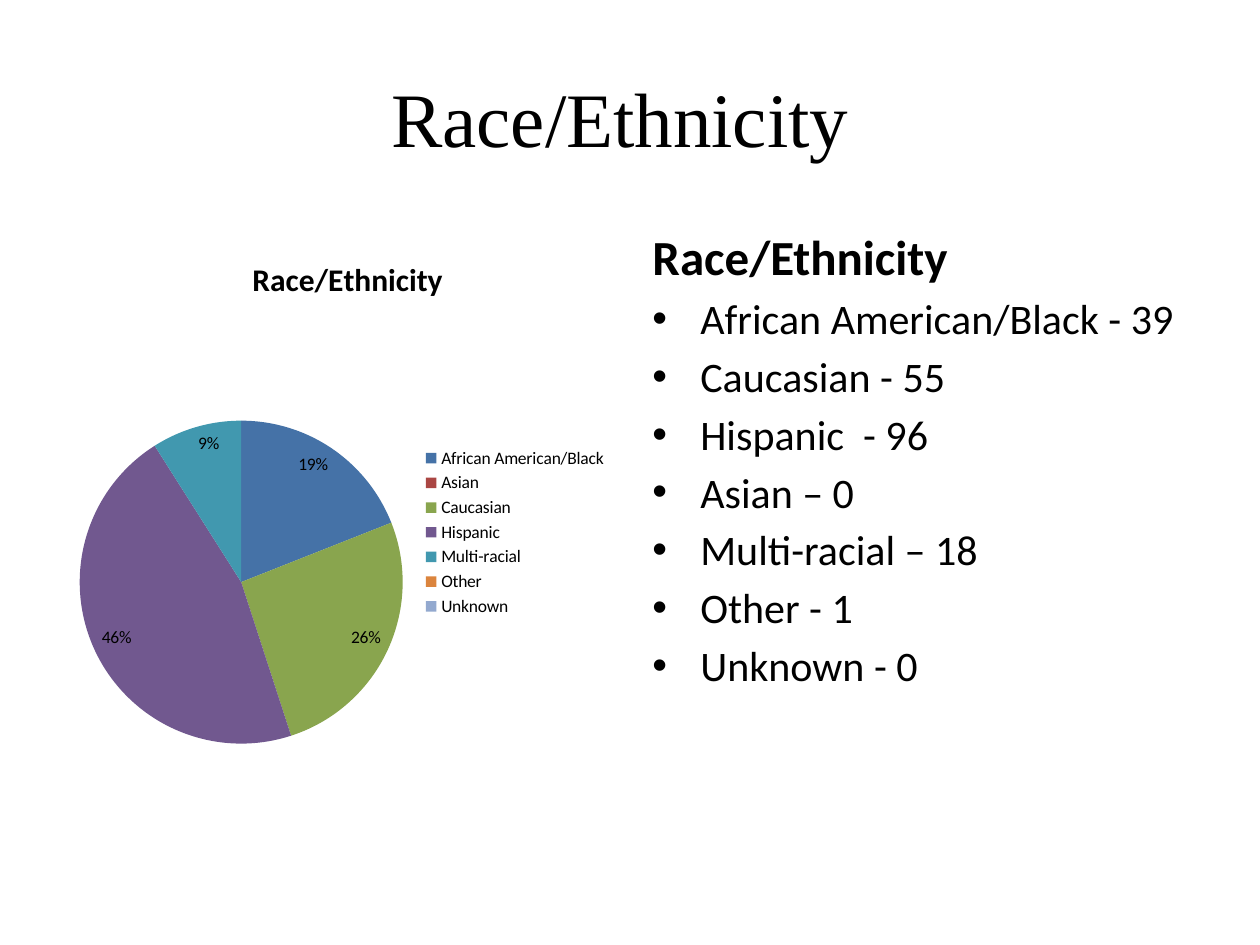
from lxml.etree import SubElement
from pptx import Presentation
from pptx.chart.data import CategoryChartData
from pptx.dml.color import RGBColor
from pptx.enum.chart import XL_CHART_TYPE, XL_LABEL_POSITION, XL_LEGEND_POSITION
from pptx.enum.text import MSO_ANCHOR, PP_ALIGN
from pptx.oxml.ns import qn
from pptx.util import Inches, Pt

BLACK = RGBColor(0, 0, 0)
SLICES = [
    ("African American/Black", 19, RGBColor(0x45, 0x72, 0xA7)),
    ("Asian", 0, RGBColor(0xAA, 0x46, 0x43)),
    ("Caucasian", 26, RGBColor(0x89, 0xA5, 0x4E)),
    ("Hispanic", 46, RGBColor(0x71, 0x58, 0x8F)),
    ("Multi-racial", 9, RGBColor(0x41, 0x98, 0xAF)),
    ("Other", 0, RGBColor(0xDB, 0x84, 0x3D)),
    ("Unknown", 0, RGBColor(0x93, 0xA9, 0xCF)),
]
COUNTS = [
    "African American/Black - 39",
    "Caucasian - 55",
    "Hispanic  - 96",
    "Asian – 0",
    "Multi-racial – 18",
    "Other - 1",
    "Unknown - 0",
]


def set_font(font, **values):
    font.color.rgb = BLACK
    for name, value in values.items():
        setattr(font, name, value)


def add_text_box(page, left, top, width, height, anchor):
    box = page.shapes.add_textbox(Inches(left), Inches(top), Inches(width), Inches(height))
    box.text_frame.word_wrap = True
    box.text_frame.vertical_anchor = anchor
    return box.text_frame


def write_span(para, text, **values):
    span = para.add_run()
    span.text = text
    set_font(span.font, **values)


def add_bullet(para):
    properties = para._p.get_or_add_pPr()
    properties.set("marL", str(Inches(0.38)))
    properties.set("indent", str(-Inches(0.38)))
    SubElement(properties, qn("a:buFont")).set("typeface", "Arial")
    SubElement(properties, qn("a:buChar")).set("char", "•")


def add_title(page):
    frame = add_text_box(page, 0.5, 0.3, 9, 1.25, MSO_ANCHOR.MIDDLE)
    para = frame.paragraphs[0]
    para.alignment = PP_ALIGN.CENTER
    write_span(para, "Race/Ethnicity ", name="Times New Roman", size=Pt(44))


def add_counts(page):
    frame = add_text_box(page, 5.08, 1.75, 4.42, 4.95, MSO_ANCHOR.TOP)
    write_span(frame.paragraphs[0], "Race/Ethnicity", name="Calibri", size=Pt(28), bold=True)
    for count in COUNTS:
        para = frame.add_paragraph()
        para.space_before = Pt(4.2)
        add_bullet(para)
        write_span(para, count, name="Calibri", size=Pt(24))


def place_chart_part(layout, target, **fractions):
    manual = SubElement(layout, qn("c:manualLayout"))
    if target:
        SubElement(manual, qn("c:layoutTarget")).set("val", target)
    for mode in ("xMode", "yMode"):
        SubElement(manual, qn(f"c:{mode}")).set("val", "edge")
    for name, fraction in fractions.items():
        SubElement(manual, qn(f"c:{name}")).set("val", str(fraction))


def chart_layout(element, position):
    layout = element.find(qn("c:layout"))
    if layout is None:
        layout = SubElement(element, qn("c:layout"))
        element.insert(position, layout)
    return layout


def hide_label(labels, index):
    label = SubElement(labels._element, qn("c:dLbl"))
    SubElement(label, qn("c:idx")).set("val", str(index))
    SubElement(label, qn("c:delete")).set("val", "1")
    labels._element.insert(0, label)


def add_pie(page):
    data = CategoryChartData()
    data.categories = [name for name, value, color in SLICES]
    data.add_series("Series 1", [value for name, value, color in SLICES])
    chart = page.shapes.add_chart(
        XL_CHART_TYPE.PIE, Inches(0.5), Inches(1.75), Inches(4.42), Inches(4.95), data
    ).chart
    set_font(chart.font, name="Calibri", size=Pt(10))

    chart.has_title = True
    title = chart.chart_title
    write_span(title.text_frame.paragraphs[0], "Race/Ethnicity", name="Calibri", size=Pt(18), bold=True)
    place_chart_part(chart_layout(title._element, 1), None, x=0.33, y=0.05)
    plot_area = chart._chartSpace.chart.plotArea
    place_chart_part(chart_layout(plot_area, 0), "inner", x=0.03, y=0.32, w=0.58, h=0.52)

    chart.has_legend = True
    chart.legend.position = XL_LEGEND_POSITION.RIGHT
    chart.legend.include_in_layout = False

    plot = chart.plots[0]
    plot.vary_by_categories = True
    series = plot.series[0]
    for index, (name, value, color) in enumerate(SLICES):
        fill = series.points[index].format.fill
        fill.solid()
        fill.fore_color.rgb = color

    labels = series.data_labels
    label_format = {
        "show_percentage": True,
        "show_value": False,
        "number_format": "0%",
        "number_format_is_linked": False,
        "position": XL_LABEL_POSITION.INSIDE_END,
    }
    for name, value in label_format.items():
        setattr(labels, name, value)
    set_font(labels.font, name="Calibri", size=Pt(10))
    hide_label(labels, 1)


def main():
    deck = Presentation()
    deck.slide_width = Inches(10)
    deck.slide_height = Inches(7.5)
    page = deck.slides.add_slide(deck.slide_layouts[6])
    add_title(page)
    add_counts(page)
    add_pie(page)
    deck.save("out.pptx")


if __name__ == "__main__":
    main()
